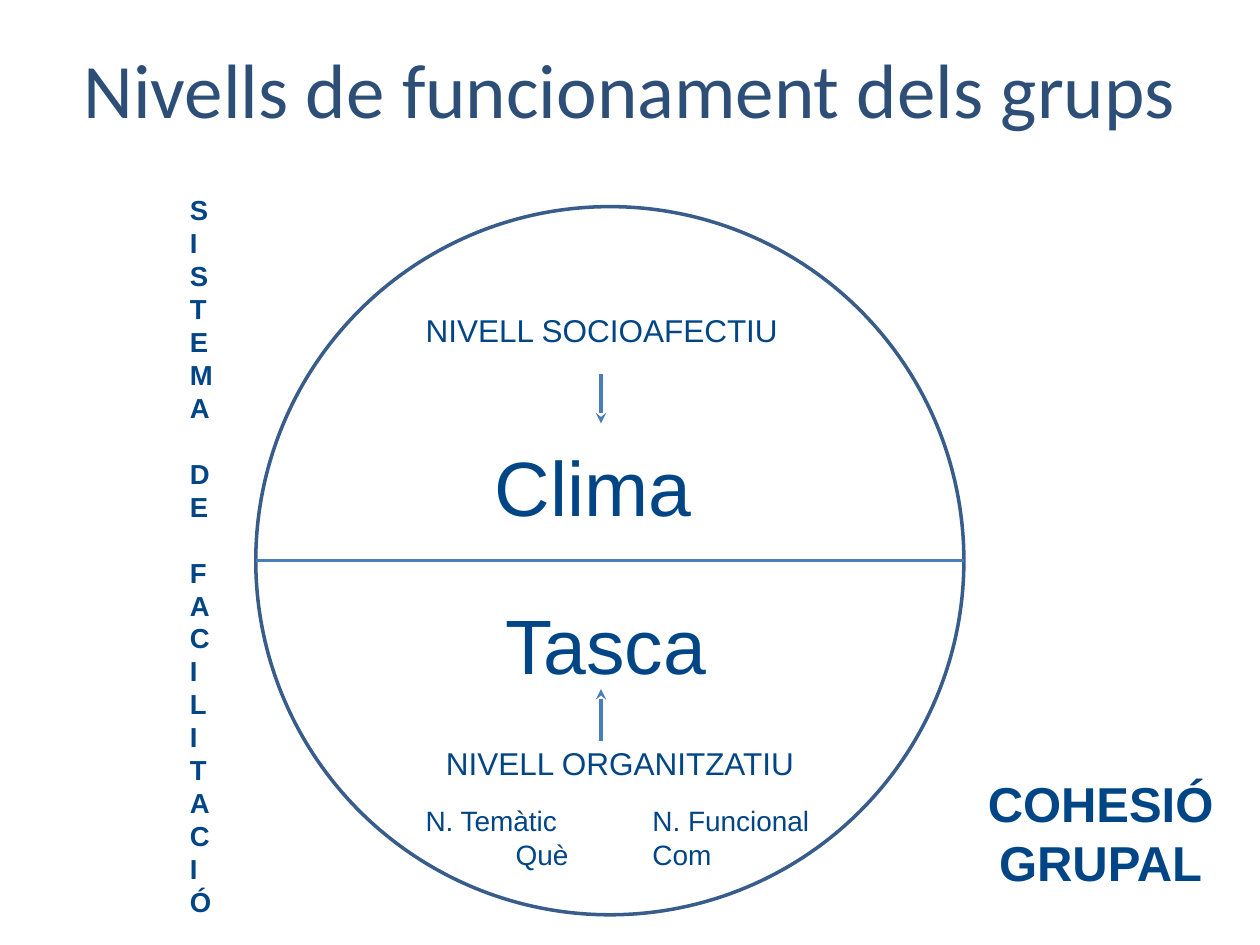
from lxml.etree import SubElement
from pptx import Presentation
from pptx.dml.color import RGBColor
from pptx.enum.shapes import MSO_CONNECTOR as Line, MSO_SHAPE as Shape
from pptx.enum.text import MSO_ANCHOR as Anchor, PP_ALIGN as Align
from pptx.oxml.ns import qn
from pptx.util import Inches, Pt

NAVY = RGBColor(0x00, 0x45, 0x86)
TITLE_BLUE = RGBColor(0x2D, 0x4E, 0x77)
RING_BLUE = RGBColor(0x38, 0x5D, 0x8A)
LINE_BLUE = RGBColor(0x4A, 0x7E, 0xBB)


def add_text(page, text, box, size, font="Arial", color=NAVY, bold=False,
             aligns=(Align.LEFT,), anchor=Anchor.TOP, wrap=False):
    """Place text in a box, one paragraph per line, cycling through aligns."""
    frame = page.shapes.add_textbox(*map(Inches, box)).text_frame
    frame.word_wrap = wrap
    frame.vertical_anchor = anchor
    for index, line in enumerate(text.split("\n")):
        para = frame.paragraphs[0] if index == 0 else frame.add_paragraph()
        para.alignment = aligns[index % len(aligns)]
        span = para.add_run()
        span.text = line
        span.font.name = font
        span.font.size = Pt(size)
        span.font.bold = bold
        span.font.color.rgb = color


def add_line(page, start, end, width, arrow=False):
    """Draw a straight line, with a stealth arrowhead at its end if asked."""
    line = page.shapes.add_connector(Line.STRAIGHT, *map(Inches, start + end))
    line.line.color.rgb = LINE_BLUE
    line.line.width = Pt(width)
    if arrow:
        SubElement(line.line._get_or_add_ln(), qn("a:tailEnd"), type="stealth")
    SubElement(line._element.spPr, qn("a:effectLst"))


def add_circle(page, left, top, size):
    """Draw the group circle, split in half by a horizontal line."""
    circle = page.shapes.add_shape(Shape.OVAL, *map(Inches, (left, top, size, size)))
    circle.shadow.inherit = False
    circle.fill.background()
    circle.line.color.rgb = RING_BLUE
    circle.line.width = Pt(2)
    middle = top + size / 2
    add_line(page, (left, middle), (left + size, middle), 1.5)


def add_climate(page, left, top):
    """Fill the upper half: the socio-affective level leads to the climate."""
    add_text(page, "Clima", (left + 0.55, top + 1.02, 1.78, 0.84), 44)
    add_text(page, "NIVELL SOCIOAFECTIU", (left, top, 3.03, 0.4), 18)
    add_line(page, (left + 1.49, top + 0.55), (left + 1.49, top + 0.94), 2, arrow=True)


def add_task(page, left, top):
    """Fill the lower half: the organisational level leads to the task."""
    add_text(page, "Tasca", (left + 0.63, top, 1.81, 0.84), 44)
    add_text(page, "NIVELL ORGANITZATIU", (left + 0.16, top + 1.17, 2.99, 0.4), 18)
    add_line(page, (left + 1.49, top + 1.19), (left + 1.49, top + 0.78), 2, arrow=True)
    add_text(page, "N. Temàtic\nQuè", (left, top + 1.64, 1.33, 0.64), 16,
             aligns=(Align.LEFT, Align.RIGHT), wrap=True)
    add_text(page, "N. Funcional\nCom", (left + 1.8, top + 1.64, 1.46, 0.64), 16)


def main():
    """Build and save the slide."""
    deck = Presentation()
    deck.slide_width, deck.slide_height = Inches(10), Inches(7.5)
    page = deck.slides.add_slide(deck.slide_layouts[6])
    centered = (Align.CENTER,)
    add_text(page, "Nivells de funcionament dels grups", (0.5, 0.3, 9, 0.79), 44,
             font="Calibri", color=TITLE_BLUE, aligns=centered,
             anchor=Anchor.MIDDLE, wrap=True)
    add_circle(page, 2.03, 1.64, 5.62)
    add_climate(page, 3.28, 2.42)
    add_task(page, 3.28, 4.69)
    add_text(page, "COHESIÓ\nGRUPAL", (7.73, 6.09, 2.01, 1.04), 28,
             bold=True, aligns=centered)
    add_text(page, "SISTEMA DE FACILITACIÓ", (1.41, 1.48, 0.23, 5.65), 15.7,
             bold=True, aligns=centered, wrap=True)
    deck.save("out.pptx")


if __name__ == "__main__":
    main()
